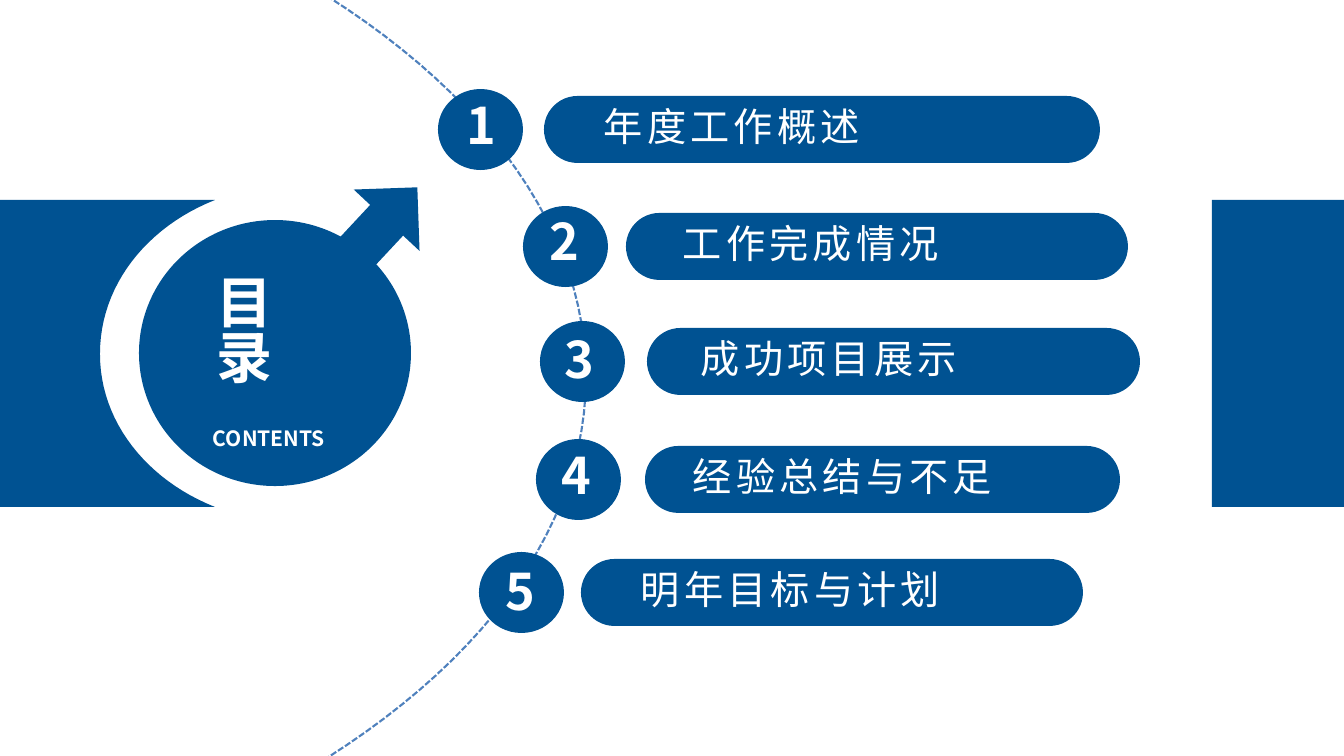
from pptx import Presentation
from pptx.dml.color import RGBColor
from pptx.enum.dml import MSO_LINE
from pptx.enum.shapes import MSO_SHAPE
from pptx.enum.text import MSO_ANCHOR, PP_ALIGN
from pptx.oxml.ns import qn
from pptx.util import Pt
from lxml.etree import SubElement

# Content: title, circle left and top, pill left and width, label left, number left and top
TITLE = ["目", "录"]
SUBTITLE = "CONTENTS"
CHAPTERS = [
    ("年度工作概述", (438, 89), (544, 556), 592, (455, 93)),
    ("工作完成情况", (523, 206), (626, 502), 671, (538, 209)),
    ("成功项目展示", (540, 321), (647, 493), 689, (553, 327)),
    ("经验总结与不足", (536, 439), (645, 475), 681, (550, 443)),
    ("明年目标与计划", (479, 552), (581, 502), 629, (494, 559)),
]
BAND_TOP, BAND_BOTTOM = 200, 507
# Cubic curves: start, two control points, end
NOTCH_CURVES = [
    ((215, 507), (147, 480), (100, 422), (100, 354)),
    ((100, 354), (100, 285), (147, 227), (215, 200)),
]
ARC_CURVES = [
    ((327, -4), (488, 98), (586, 231), (586, 377)),
    ((586, 377), (586, 523), (488, 656), (327, 758)),
]

BLUE = RGBColor(0x00, 0x52, 0x92)
ARC_BLUE = RGBColor(0x4F, 0x81, 0xBD)
WHITE = RGBColor(0xFF, 0xFF, 0xFF)
FONT = "Noto Sans CJK SC"
PX = 12192000 / 1344
CURVE_STEPS = 24


def px(value):
    return round(value * PX)


presentation = Presentation()
presentation.slide_width, presentation.slide_height = px(1344), px(756)
slide = presentation.slides.add_slide(presentation.slide_layouts[6])


def add_solid(kind, left, top, width, height):
    shape = slide.shapes.add_shape(kind, px(left), px(top), px(width), px(height))
    shape.shadow.inherit = False
    shape.fill.solid()
    shape.fill.fore_color.rgb = BLUE
    shape.line.fill.background()
    return shape


def add_text(lines, left, top, width, height, size, bold=False, spacing=0,
             align=PP_ALIGN.LEFT, wrap=False):
    box = slide.shapes.add_textbox(px(left), px(top), px(width), px(height))
    frame = box.text_frame
    frame.word_wrap = wrap
    frame.vertical_anchor = MSO_ANCHOR.MIDDLE
    frame.margin_left = frame.margin_right = px(12)
    frame.margin_top = frame.margin_bottom = px(6)
    for index, line in enumerate(lines):
        paragraph = frame.add_paragraph() if index else frame.paragraphs[0]
        paragraph.alignment = align
        paragraph.line_spacing = 0.82
        run = paragraph.add_run()
        run.text = line
        run.font.size, run.font.bold, run.font.name = Pt(size), bold, FONT
        run.font.color.rgb = WHITE
        properties = run.font._element
        if spacing:
            properties.set("spc", str(spacing * 100))
        SubElement(properties, qn("a:ea")).set("typeface", FONT)
    return box


def curve_points(curves):
    points = [curves[0][0]]
    for a, b, c, d in curves:
        for step in range(1, CURVE_STEPS + 1):
            t = step / CURVE_STEPS
            u = 1 - t
            points.append(tuple(
                u**3 * a[i] + 3 * u * u * t * b[i] + 3 * u * t * t * c[i] + t**3 * d[i]
                for i in (0, 1)))
    return points


def add_outline(points, close):
    scaled = [(px(x), px(y)) for x, y in points]
    builder = slide.shapes.build_freeform(*scaled[0])
    builder.add_line_segments(scaled[1:], close=close)
    shape = builder.convert_to_shape()
    shape.shadow.inherit = False
    return shape


# Arrow and side bands
arrow = add_solid(MSO_SHAPE.RIGHT_ARROW, 340, 176, 92, 90)
arrow.rotation = 313
add_solid(MSO_SHAPE.RECTANGLE, 1212, BAND_TOP, 132, BAND_BOTTOM - BAND_TOP)
left_band = add_outline(
    [(0, BAND_TOP), (0, BAND_BOTTOM)] + curve_points(NOTCH_CURVES), close=True)
left_band.fill.solid()
left_band.fill.fore_color.rgb = BLUE
left_band.line.fill.background()

# Dashed arc
arc = add_outline(curve_points(ARC_CURVES), close=False)
arc.fill.background()
arc.line.color.rgb = ARC_BLUE
arc.line.width = Pt(1.5)
arc.line.dash_style = MSO_LINE.SQUARE_DOT

# Chapters
for number, (label, circle, pill, label_left, number_at) in enumerate(CHAPTERS, 1):
    circle_left, circle_top = circle
    pill_left, pill_width = pill
    add_solid(MSO_SHAPE.OVAL, circle_left, circle_top, 85, 81)
    bar = add_solid(MSO_SHAPE.ROUNDED_RECTANGLE, pill_left, circle_top + 7, pill_width, 67)
    bar.adjustments[0] = 0.5
    add_text([label], label_left, circle_top + 11, 26 + 43.5 * len(label), 59,
             size=28, spacing=3)
    add_text([str(number)], *number_at, 55, 74, size=36, bold=True)

# Title disc
add_solid(MSO_SHAPE.OVAL, 139, 220, 272, 266)
add_text(TITLE, 205, 260, 134, 148, size=40, bold=True, align=PP_ALIGN.JUSTIFY, wrap=True)
add_text([SUBTITLE], 201, 422, 143, 37, size=15, bold=True)

presentation.save("out.pptx")
